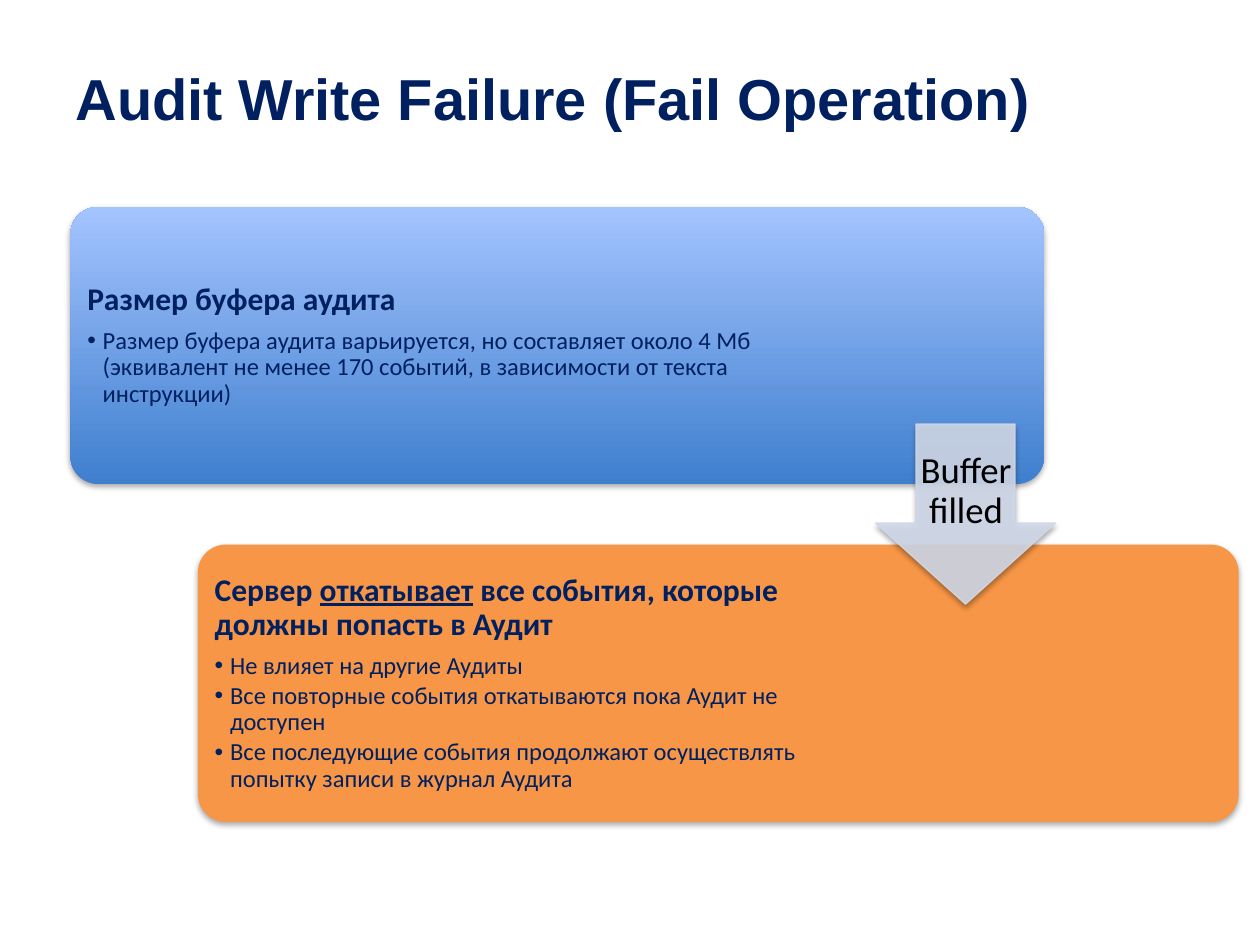
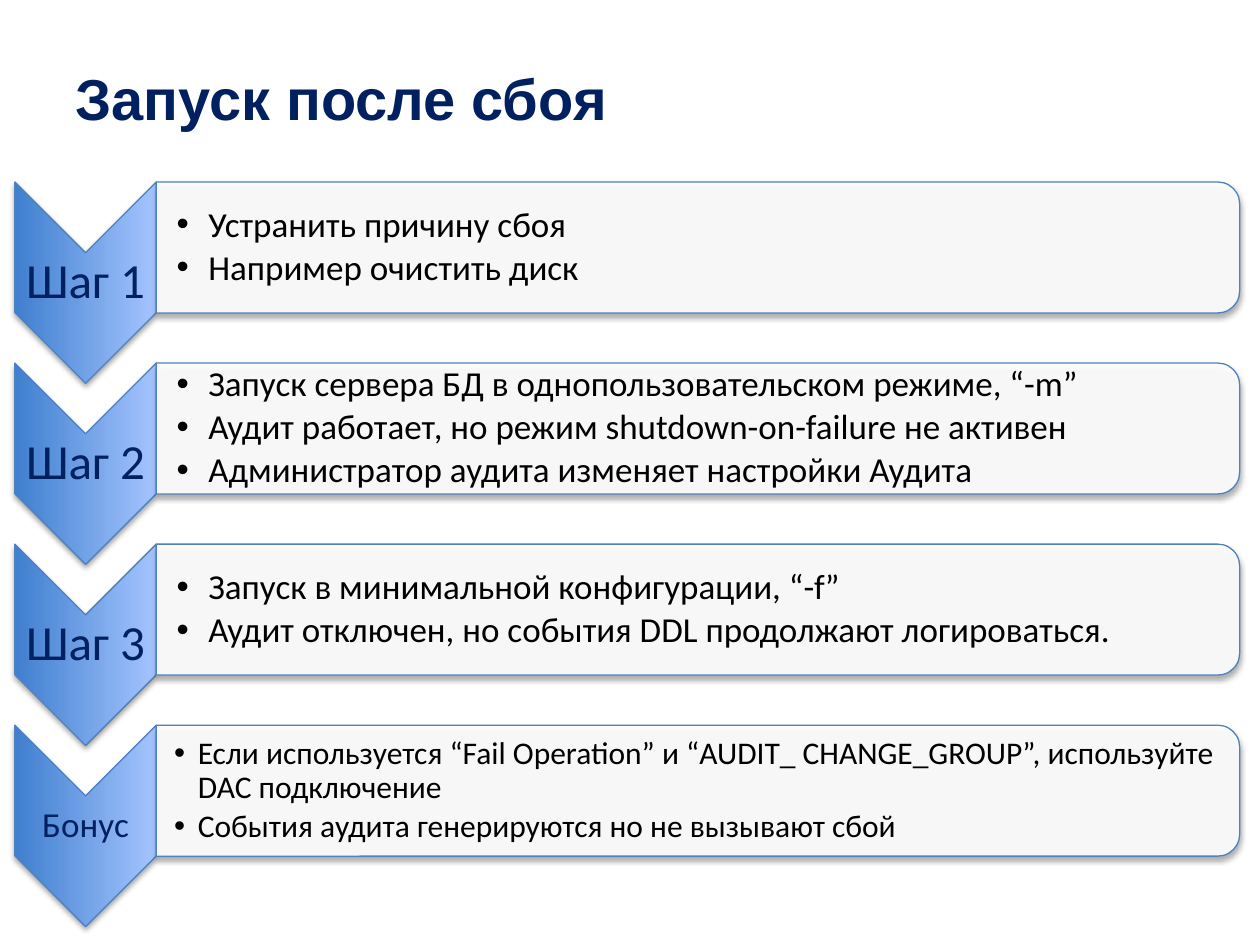
from dataclasses import dataclass

from lxml import etree
from pptx import Presentation
from pptx import util as u
from pptx.dml.color import RGBColor
from pptx.enum import shapes, text
from pptx.oxml import ns

SHAPE = shapes.MSO_SHAPE


@dataclass(frozen=True)
class Theme:
    navy: str = "002060"
    black: str = "000000"
    white: str = "FFFFFF"
    orange: str = "F79646"
    outline: str = "4F81BD"
    pale: str = "D0D8E8"
    gradient: tuple = ("3F7FCE", "A4C4FF")  # bottom, top
    title_font: str = "Arial"
    body_font: str = "Calibri"
    title: int = 33
    heading: int = 18
    detail: int = 14
    arrow: int = 21
    step: int = 28
    item: int = 20
    line_spacing: float = 0.9
    label_gap: float = 0.35  # space after, as a share of the type size
    bullet_gap: float = 0.15


def add_xml(parent, tag, **attrs):
    return etree.SubElement(parent, ns.qn(tag), attrs)


def set_alpha(fill, percent):
    color = fill._xPr.find(ns.qn("a:solidFill"))[0]
    add_xml(color, "a:alpha", val=str(percent * 1000))


class Deck:
    def __init__(self, theme):
        self.theme = theme
        self.prs = Presentation()
        self.prs.slide_width, self.prs.slide_height = u.Cm(25.4), u.Cm(19.05)
        self.s = None

    def new_slide(self, title):
        t = self.theme
        self.s = self.prs.slides.add_slide(self.prs.slide_layouts[6])
        tf = self.text_box(1.27, 0.38, 22.86, 3.18, (0.25, 0.13))
        self.add_run(tf.paragraphs[0], title, t.title, t.navy, bold=True, font=t.title_font)

    def shape(self, kind, x, y, w, h, fill, line=None, alpha=None, adj=(), turned=False):
        """Add a shadowed shape that covers x, y, w, h, even when turned by 90 degrees."""
        if turned:
            x, y, w, h = x + (w - h) / 2, y + (h - w) / 2, h, w
        sp = self.s.shapes.add_shape(kind, u.Cm(x), u.Cm(y), u.Cm(w), u.Cm(h))
        sp.rotation = 90 if turned else 0
        for i, value in enumerate(adj):
            sp.adjustments[i] = value
        if isinstance(fill, tuple):
            sp.fill.gradient()
            sp.fill.gradient_angle = 90
            for position, (stop, color) in enumerate(zip(sp.fill.gradient_stops, fill)):
                stop.position = position
                stop.color.rgb = RGBColor.from_string(color)
        else:
            sp.fill.solid()
            sp.fill.fore_color.rgb = RGBColor.from_string(fill)
            if alpha:
                set_alpha(sp.fill, alpha)
        if line:
            sp.line.color.rgb = RGBColor.from_string(line)
            sp.line.width = u.Pt(0.75)
        else:
            sp.line.fill.background()
        self.add_shadow(sp)
        return sp

    def add_shadow(self, sp):
        sp.shadow.inherit = False
        effects = sp._element.spPr.find(ns.qn("a:effectLst"))
        shadow = add_xml(effects, "a:outerShdw", blurRad="40000", dist="23000",
                         dir="5400000", rotWithShape="0")
        color = add_xml(shadow, "a:srgbClr", val=self.theme.black)
        add_xml(color, "a:alpha", val="35000")

    def text_box(self, x, y, w, h, insets):
        """Add a wrapped, vertically centred box; insets are (left, other sides)."""
        tf = self.s.shapes.add_textbox(u.Cm(x), u.Cm(y), u.Cm(w), u.Cm(h)).text_frame
        tf.word_wrap = True
        tf.vertical_anchor = text.MSO_ANCHOR.MIDDLE
        left, other = insets
        tf.margin_left = u.Cm(left)
        tf.margin_top = tf.margin_right = tf.margin_bottom = u.Cm(other)
        return tf

    def add_run(self, p, content, size, color, bold=False, underline=False, font=None):
        r = p.add_run()
        r.text = content
        r.font.name = font or self.theme.body_font
        r.font.size = u.Pt(size)
        r.font.color.rgb = RGBColor.from_string(color)
        r.font.bold = bold
        if underline:
            r.font.underline = True

    def paragraph(self, tf, size, gap, indent=None):
        """Start the next paragraph, bulleted when an indent is given."""
        p = tf.paragraphs[0]
        if p.runs:
            p = tf.add_paragraph()
        if indent:
            p.level = 1
            pPr = p._p.get_or_add_pPr()
            pPr.set("marL", str(u.Cm(indent)))
            pPr.set("indent", str(-u.Cm(indent)))
            add_xml(pPr, "a:buFont", typeface="Arial")
            add_xml(pPr, "a:buChar", char="•")
        p.line_spacing = self.theme.line_spacing
        p.space_after = u.Pt(round(size * gap, 1))
        return p

    def bullets(self, tf, items, size, color, indent):
        for item in items:
            p = self.paragraph(tf, size, self.theme.bullet_gap, indent)
            self.add_run(p, item, size, color)

    def label(self, x, y, w, h, content, size, color, inset):
        tf = self.text_box(x, y, w, h, (inset, inset))
        p = self.paragraph(tf, size, self.theme.label_gap)
        p.alignment = text.PP_ALIGN.CENTER
        self.add_run(p, content, size, color)

    def card(self, x, y, w, text_w, fill, heading, items):
        """Add a rounded card; heading is a list of (text, underlined) runs."""
        t, h, pad = self.theme, 5.59, 0.16
        self.shape(SHAPE.ROUNDED_RECTANGLE, x, y, w, h, fill, adj=[0.1])
        tf = self.text_box(x + pad, y + pad, text_w, h - 2 * pad, (0.18, 0.18))
        p = self.paragraph(tf, t.heading, t.label_gap)
        for content, underlined in heading:
            self.add_run(p, content, t.heading, t.navy, bold=True, underline=underlined)
        self.bullets(tf, items, t.detail, t.navy, 0.31)

    def down_arrow(self, x, y, size, content):
        t = self.theme
        sp = self.shape(SHAPE.DOWN_ARROW, x, y, size, size, t.pale, t.pale, 90, [0.55, 0.45])
        set_alpha(sp.line.fill, 90)
        self.label(x + 0.82, y, 2.01, 2.72, content, t.arrow, t.black, 0.07)

    def step(self, y, name, items, name_size, item_size, inset, indent):
        t, x, chevron_w, body_h = self.theme, 0.3, 2.85, 2.64
        self.shape(SHAPE.CHEVRON, x, y, chevron_w, 4.06, t.gradient, t.outline, turned=True)
        self.label(x, y + 1.42, chevron_w, 1.22, name, name_size, t.navy, 0.04)
        body_x = x + chevron_w
        self.shape(SHAPE.ROUND_2_SAME_RECTANGLE, body_x, y, 21.84, body_h,
                   t.white, t.outline, 90, turned=True)
        tf = self.text_box(body_x, y + 0.13, 21.71, body_h - 0.26, (inset, 0.03))
        self.bullets(tf, items, item_size, t.black, indent)


def build_failure_slide(deck):
    t = deck.theme
    deck.new_slide("Audit Write Failure (Fail Operation)")
    deck.card(1.42, 4.17, 19.63, 14.2, t.gradient, [("Размер буфера аудита", False)], [
        "Размер буфера аудита варьируется, но составляет около 4 Мб "
        "(эквивалент не менее 170 событий, в зависимости от текста инструкции)",
    ])
    rollback = [("Сервер ", False), ("откатывает", True),
                (" все события, которые должны попасть в Аудит", False)]
    deck.card(3.99, 10.98, 20.98, 13.34, t.orange, rollback, [
        "Не влияет на другие Аудиты",
        "Все повторные события откатываются пока Аудит не доступен",
        "Все последующие события продолжают осуществлять попытку записи в журнал Аудита",
    ])
    deck.down_arrow(17.65, 8.55, 3.63, "Buffer filled")


def build_recovery_slide(deck):
    t = deck.theme
    deck.new_slide("Запуск после сбоя")
    regular = (t.step, t.item, 0.41, 0.64)
    bonus = (t.item, t.heading, 0.36, 0.48)
    steps = [
        ("Шаг 1", ["Устранить причину сбоя", "Например очистить диск"], regular),
        ("Шаг 2", ["Запуск сервера БД в однопользовательском режиме, “-m”",
                   "Аудит работает, но режим shutdown-on-failure не активен",
                   "Администратор аудита изменяет настройки Аудита"], regular),
        ("Шаг 3", ["Запуск в минимальной конфигурации, “-f”",
                   "Аудит отключен, но события DDL продолжают логироваться."], regular),
        ("Бонус", ["Если используется “Fail Operation” и “AUDIT_ CHANGE_GROUP”, "
                   "используйте DAC подключение",
                   "События аудита генерируются но не вызывают сбой"], bonus),
    ]
    top, pitch = 3.67, 3.65
    for i, (name, items, style) in enumerate(steps):
        deck.step(top + i * pitch, name, items, *style)


def main():
    deck = Deck(Theme())
    build_failure_slide(deck)
    build_recovery_slide(deck)
    deck.prs.save("out.pptx")


if __name__ == "__main__":
    main()
